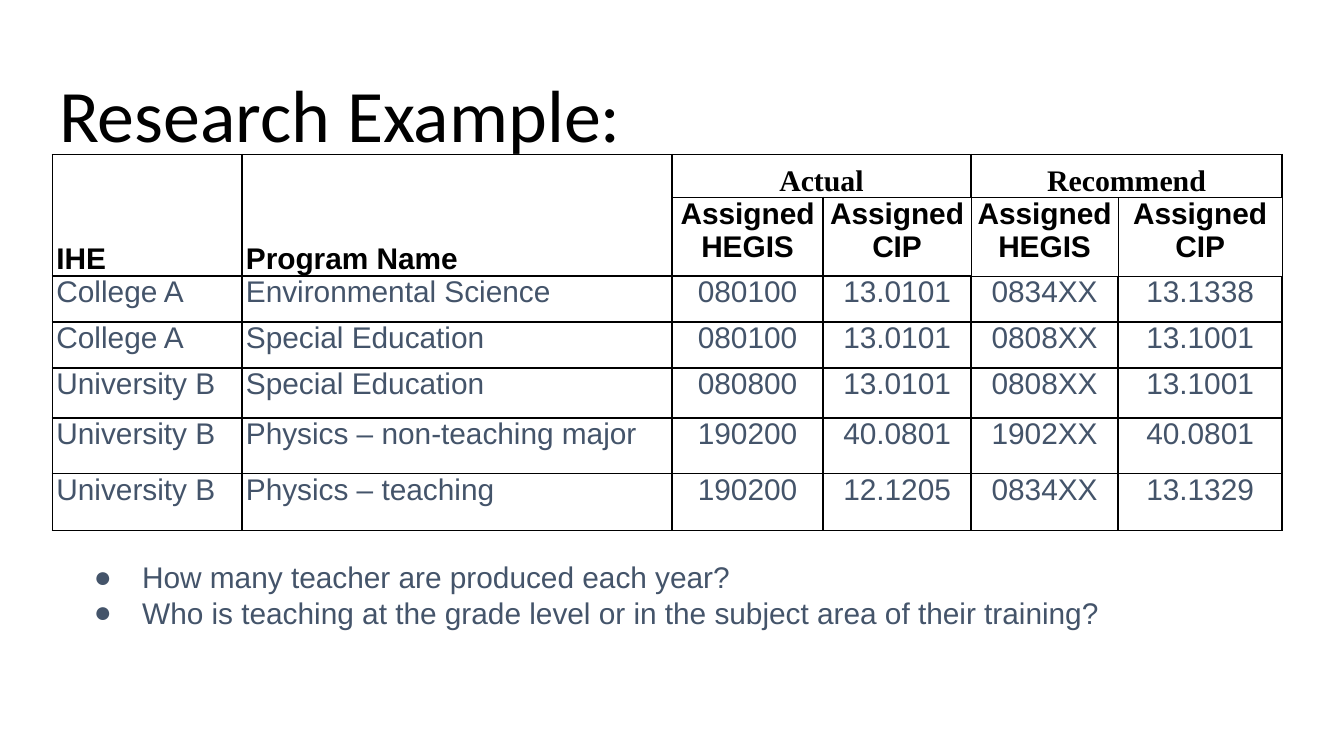
import dataclasses

import pptx
import pptx.dml.color
import pptx.enum.text
import pptx.oxml
import pptx.oxml.ns
import pptx.util

ALIGN = pptx.enum.text.PP_ALIGN
ANCHOR = pptx.enum.text.MSO_ANCHOR
EMU_PER_PX = 4572  # 200 px to the inch


@dataclasses.dataclass(frozen=True)
class Theme:
    ink: str = "000000"
    slate: str = "44546A"
    title_font: str = "Calibri"
    body_font: str = "Arial"
    group_font: str = "Times New Roman"
    title_size: float = 39.6
    body_size: float = 16
    rule: float = 1
    hairline: float = 0.5


COLUMN_WIDTHS = [282, 640, 225, 220, 219, 244]
ROW_HEIGHTS = [64, 117, 68, 69, 74, 83, 85]
HEADERS = [
    ["IHE", "Program Name", "Actual", "", "Recommend", ""],
    ["", "", "Assigned HEGIS", "Assigned CIP", "Assigned HEGIS", "Assigned CIP"],
]
PROGRAMS = [
    ["College A", "Environmental Science", "080100", "13.0101", "0834XX", "13.1338"],
    ["College A", "Special Education", "080100", "13.0101", "0808XX", "13.1001"],
    ["University B", "Special Education", "080800", "13.0101", "0808XX", "13.1001"],
    ["University B", "Physics – non-teaching major", "190200", "40.0801", "1902XX", "40.0801"],
    ["University B", "Physics – teaching", "190200", "12.1205", "0834XX", "13.1329"],
]
MERGES = [((0, 0), (1, 0)), ((0, 1), (1, 1)), ((0, 2), (0, 3)), ((0, 4), (0, 5))]
# Sides (left, right, top, bottom) drawn as hairlines around the recommended headers
HAIRLINES = {
    (0, 4): "B", (0, 5): "B",
    (1, 3): "R", (1, 4): "LRTB", (1, 5): "LRTB",
    (2, 4): "T", (2, 5): "T",
}
QUESTIONS = [
    "How many teacher are produced each year?",
    "Who is teaching at the grade level or in the subject area of their training?",
]


def px(length):
    return pptx.util.Emu(length * EMU_PER_PX)


def write(paragraph, text, *, font, size, color, bold=False, align=ALIGN.LEFT, spacing=None):
    paragraph.alignment = align
    if spacing:
        paragraph.line_spacing = spacing
    run = paragraph.add_run()
    run.text = text
    run.font.name = font
    run.font.size = pptx.util.Pt(size)
    run.font.bold = bold
    run.font.color.rgb = pptx.dml.color.RGBColor.from_string(color)


def add_xml(parent, markup, index=None):
    """Insert a DrawingML element, at the end unless an index is given."""
    tag, rest = markup.split(" ", 1)
    element = pptx.oxml.parse_xml(f"{tag} {pptx.oxml.ns.nsdecls('a')} {rest}")
    parent.insert(len(parent) if index is None else index, element)


class SlideBuilder:
    def __init__(self, slide, theme):
        self.slide = slide
        self.theme = theme

    def title(self, text, left, top, width, height):
        heading = self.slide.shapes.title
        heading.left, heading.top = px(left), px(top)
        heading.width, heading.height = px(width), px(height)
        frame = heading.text_frame
        self.inset(frame, 20)
        frame.vertical_anchor = ANCHOR.TOP
        frame.auto_size = pptx.enum.text.MSO_AUTO_SIZE.NONE
        write(frame.paragraphs[0], text, font=self.theme.title_font,
              size=self.theme.title_size, color=self.theme.ink, spacing=0.9)

    def inset(self, frame, margin):
        frame.word_wrap = True
        frame.margin_left = frame.margin_right = px(margin)
        frame.margin_top = frame.margin_bottom = px(margin)

    def borders(self, cell, thin_sides):
        properties = cell._tc.get_or_add_tcPr()
        for index, side in enumerate("LRTB"):
            points = self.theme.hairline if side in thin_sides else self.theme.rule
            add_xml(properties,
                    f'<a:ln{side} w="{pptx.util.Pt(points)}"><a:solidFill>'
                    f'<a:srgbClr val="{self.theme.ink}"/></a:solidFill></a:ln{side}>', index)

    def table(self, headers, body, left, top):
        rows = headers + body
        grid = self.slide.shapes.add_table(
            len(rows), len(COLUMN_WIDTHS), px(left), px(top),
            px(sum(COLUMN_WIDTHS)), px(sum(ROW_HEIGHTS))).table
        grid.first_row = grid.horz_banding = False
        for column, width in zip(grid.columns, COLUMN_WIDTHS):
            column.width = px(width)
        for row, height in zip(grid.rows, ROW_HEIGHTS):
            row.height = px(height)
        for start, end in MERGES:
            grid.cell(*start).merge(grid.cell(*end))
        for r, values in enumerate(rows):
            for c, value in enumerate(values):
                self.cell(grid.cell(r, c), value, r, c, r < len(headers))

    def cell(self, cell, value, row, column, is_header):
        cell.margin_left = cell.margin_right = px(6)
        cell.margin_top = cell.margin_bottom = 0
        cell.vertical_anchor = ANCHOR.BOTTOM if row == 0 else ANCHOR.TOP
        cell.fill.background()
        self.borders(cell, HAIRLINES.get((row, column), ""))
        if value:
            is_group = row == 0 and column > 1
            write(cell.text_frame.paragraphs[0], value,
                  font=self.theme.group_font if is_group else self.theme.body_font,
                  size=self.theme.body_size,
                  color=self.theme.ink if is_header else self.theme.slate,
                  bold=is_header, align=ALIGN.CENTER if column > 1 else ALIGN.LEFT)

    def bullets(self, items, left, top, width, height):
        frame = self.slide.shapes.add_textbox(px(left), px(top), px(width), px(height)).text_frame
        self.inset(frame, 20)
        frame.auto_size = pptx.enum.text.MSO_AUTO_SIZE.SHAPE_TO_FIT_TEXT
        for index, item in enumerate(items):
            paragraph = frame.add_paragraph() if index else frame.paragraphs[0]
            write(paragraph, item, font=self.theme.body_font,
                  size=self.theme.body_size, color=self.theme.slate)
            properties = paragraph._p.get_or_add_pPr()
            properties.set("marL", str(px(100)))
            properties.set("indent", str(px(-72)))
            add_xml(properties, f'<a:buClr ><a:srgbClr val="{self.theme.slate}"/></a:buClr>')
            add_xml(properties, f'<a:buFont typeface="{self.theme.body_font}"/>')
            add_xml(properties, '<a:buChar char="●"/>')


def main():
    presentation = pptx.Presentation()
    presentation.slide_width, presentation.slide_height = px(2000), px(1125)
    title_only = presentation.slide_layouts[5]
    builder = SlideBuilder(presentation.slides.add_slide(title_only), Theme())
    builder.title("Research Example:", 68, 97, 1864, 126)
    builder.table(HEADERS, PROGRAMS, 78, 230)
    builder.bullets(QUESTIONS, 92, 812, 1700, 148)
    presentation.save("out.pptx")


if __name__ == "__main__":
    main()
